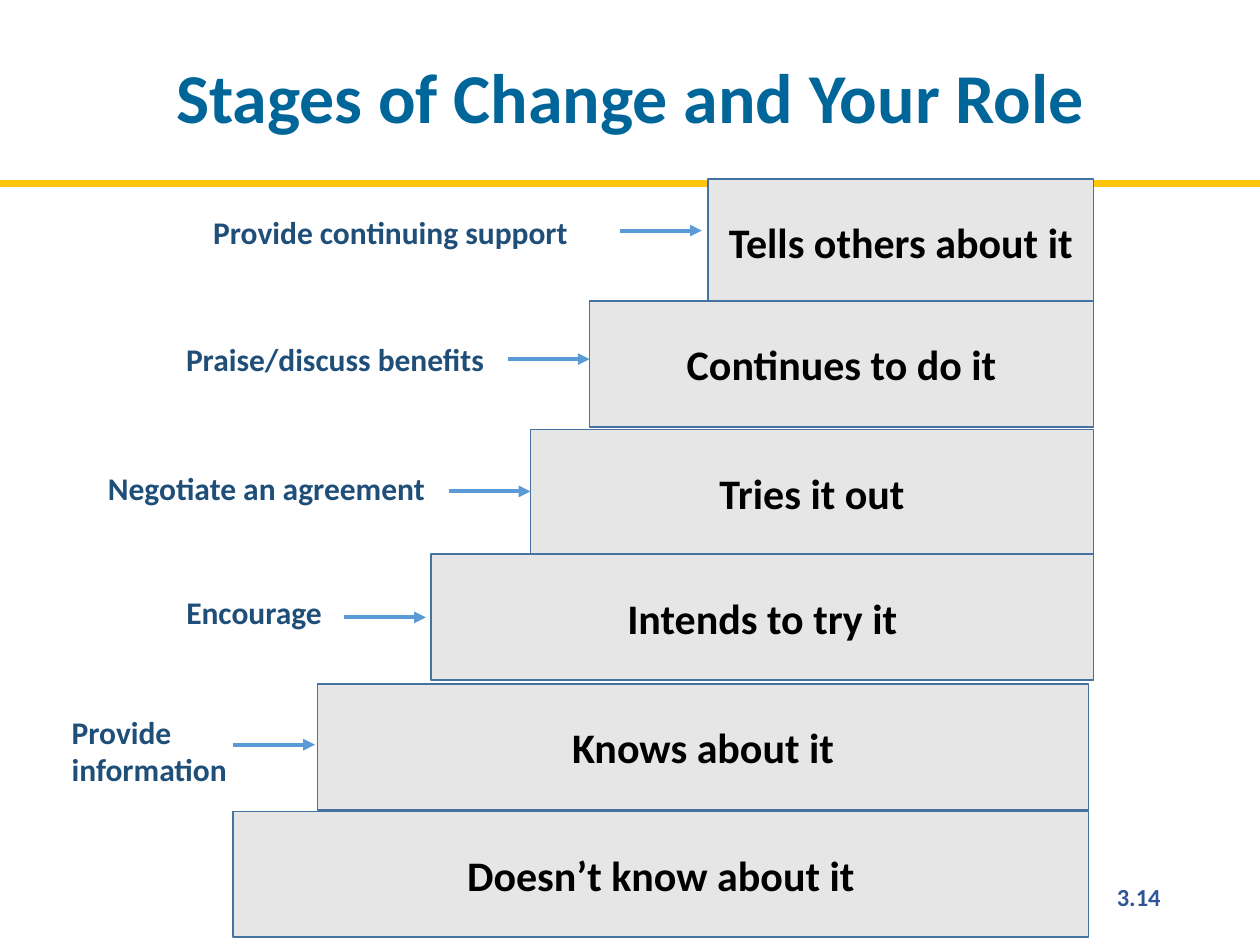
from lxml import etree
from pptx import Presentation
from pptx.dml.color import RGBColor
from pptx.enum.shapes import MSO_CONNECTOR, MSO_SHAPE
from pptx.enum.text import MSO_ANCHOR, PP_ALIGN
from pptx.oxml.ns import qn
from pptx.util import Inches, Pt

COLORS = {
    "title": "006699", "rule": "FFC60B", "step": "E7E6E6", "outline": "43739E",
    "step_text": "000000", "role": "1F4E79", "arrow": "5B9BD5", "number": "2F5597",
}

presentation = Presentation()
presentation.slide_width = Inches(10)
presentation.slide_height = Inches(7.5)
slide = presentation.slides.add_slide(presentation.slide_layouts[6])


def write_text(shape, text, size, color, alignment, anchor=MSO_ANCHOR.MIDDLE):
    frame = shape.text_frame
    frame.word_wrap = True
    frame.vertical_anchor = anchor
    paragraph = frame.paragraphs[0]
    paragraph.text = text
    paragraph.alignment = alignment
    paragraph.font.name = "Calibri"
    paragraph.font.size = Pt(size)
    paragraph.font.bold = True
    paragraph.font.color.rgb = RGBColor.from_string(COLORS[color])
    return frame


def add_line(left, right, y, color, width, arrowhead=False):
    line = slide.shapes.add_connector(
        MSO_CONNECTOR.STRAIGHT, Inches(left), Inches(y), Inches(right), Inches(y))
    line.line.color.rgb = RGBColor.from_string(COLORS[color])
    line.line.width = Pt(width)
    properties = line.line._get_or_add_ln()
    if arrowhead:
        etree.SubElement(properties, qn("a:tailEnd"), type="triangle")
    etree.SubElement(line._element.spPr, qn("a:effectLst"))


# Rule under the title
add_line(0, 10, 1.46, "rule", 4)

# Staircase of stages: text, left, top, right
stages = [
    ("Tells others about it", 5.62, 1.42, 8.68),
    ("Continues to do it", 4.68, 2.39, 8.68),
    ("Tries it out", 4.21, 3.41, 8.68),
    ("Intends to try it", 3.42, 4.4, 8.68),
    ("Knows about it", 2.52, 5.43, 8.64),
    ("Doesn’t know about it", 1.85, 6.44, 8.64),
]
for text, left, top, right in stages:
    step = slide.shapes.add_shape(
        MSO_SHAPE.RECTANGLE, Inches(left), Inches(top), Inches(right - left), Inches(1))
    step.shadow.inherit = False
    step.fill.solid()
    step.fill.fore_color.rgb = RGBColor.from_string(COLORS["step"])
    step.line.color.rgb = RGBColor.from_string(COLORS["outline"])
    step.line.width = Pt(1)
    write_text(step, text, 24, "step_text", PP_ALIGN.CENTER)

# Title
title = slide.shapes.add_textbox(0, 0, Inches(10), Inches(1.45))
frame = write_text(title, "Stages of Change and Your Role", 40, "title", PP_ALIGN.CENTER)
frame.margin_left = frame.margin_right = frame.margin_top = Inches(0.2)
frame.paragraphs[0].line_spacing = 0.9

# Your role at each stage: text, left, top, width, height, alignment
roles = [
    ("Provide continuing support", 1.52, 1.51, 3.16, 0.66, PP_ALIGN.CENTER),
    ("Praise/discuss benefits", 0.94, 2.52, 3.44, 0.66, PP_ALIGN.CENTER),
    ("Negotiate an agreement", 0.6, 3.54, 3.03, 0.66, PP_ALIGN.CENTER),
    ("Encourage", 1.38, 4.66, 1.28, 0.4, PP_ALIGN.LEFT),
    ("Provide information", 0.47, 5.6, 1.65, 0.71, PP_ALIGN.LEFT),
]
for text, left, top, width, height, alignment in roles:
    label = slide.shapes.add_textbox(
        Inches(left), Inches(top), Inches(width), Inches(height))
    write_text(label, text, 18, "role", alignment)

# Arrows from role to stage
for left, y in [(4.92, 1.83), (4.03, 2.85), (3.56, 3.9), (2.73, 4.9), (1.85, 5.91)]:
    add_line(left, left + 0.65, y, "arrow", 2.25, arrowhead=True)

# Page number
number = slide.shapes.add_textbox(Inches(7.06), Inches(6.95), Inches(2.25), Inches(0.4))
write_text(number, "3.14", 14, "number", PP_ALIGN.RIGHT, MSO_ANCHOR.TOP)

presentation.save("out.pptx")
